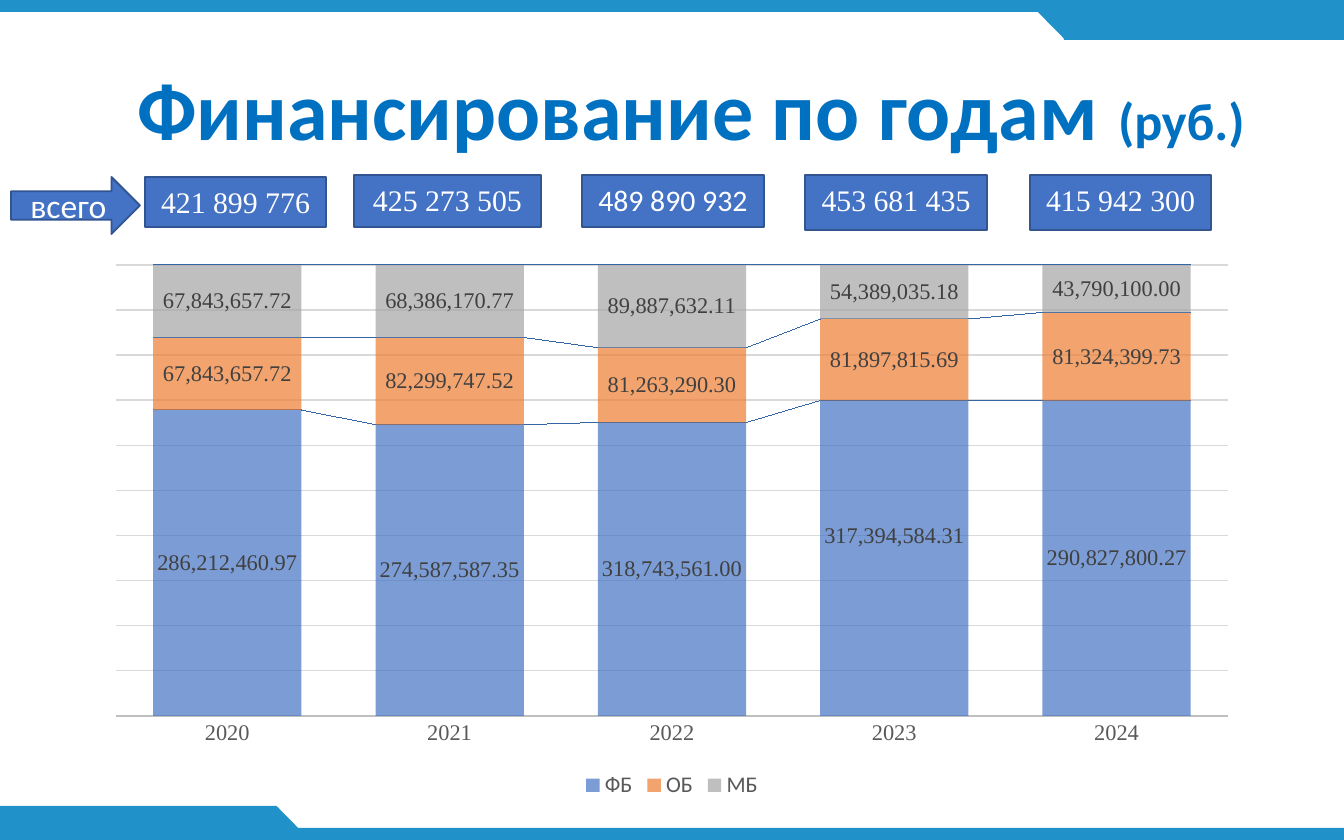
from dataclasses import dataclass

from lxml import etree
from pptx import Presentation
from pptx import util as u
from pptx.chart import data as chart_data
from pptx.dml.color import RGBColor
from pptx.enum import chart as ch
from pptx.enum import shapes, text
from pptx.oxml.ns import qn

EMU_PER_PX = 914400 / 134.4


@dataclass(frozen=True)
class Theme:
    band: str = "2191C9"
    heading: str = "0070C0"
    box: str = "4472C4"
    box_line: str = "325491"
    white: str = "FFFFFF"
    label: str = "404040"
    axis_text: str = "595959"
    axis_line: str = "BFBFBF"
    grid: str = "D9D9D9"
    sans: str = "Calibri"
    serif: str = "Times New Roman"
    heading_size: int = 44
    unit_size: int = 28
    arrow_size: int = 18
    total_size: int = 16
    chart_size: int = 12


THEME = Theme()

YEARS = ["2020", "2021", "2022", "2023", "2024"]
BUDGETS = [
    ("ФБ", "4472C4", [286212460.97, 274587587.35, 318743561.00, 317394584.31, 290827800.27]),
    ("ОБ", "ED7D31", [67843657.72, 82299747.52, 81263290.30, 81897815.69, 81324399.73]),
    ("МБ", "A5A5A5", [67843657.72, 68386170.77, 89887632.11, 54389035.18, 43790100.00]),
]
# total, font, left, top, width, height
TOTALS = [
    ("421 899 776", THEME.serif, 145, 177, 181, 50),
    ("425 273 505", THEME.serif, 354, 175, 187, 52),
    ("489 890 932", THEME.sans, 582, 175, 182, 52),
    ("453 681 435", THEME.serif, 805, 175, 182, 55),
    ("415 942 300", THEME.serif, 1030, 175, 181, 55),
]


def px(n):
    return u.Emu(round(n * EMU_PER_PX))


def rgb(code):
    return RGBColor.from_string(code)


def style_font(font, size, color, name, bold=False):
    font.size = u.Pt(size)
    font.color.rgb = rgb(color)
    font.name = name
    font.bold = bold


def add_run(paragraph, words, *style):
    run = paragraph.add_run()
    run.text = words
    style_font(run.font, *style)


def add_filled(slide, kind, box, fill, line=None):
    shape = slide.shapes.add_shape(kind, *map(px, box))
    shape.shadow.inherit = False
    shape.fill.solid()
    shape.fill.fore_color.rgb = rgb(fill)
    if line:
        shape.line.color.rgb = rgb(line)
        shape.line.width = u.Pt(1)
    else:
        shape.line.fill.background()
    return shape


def add_bands(slide):
    rect, merge = shapes.MSO_SHAPE.RECTANGLE, shapes.MSO_SHAPE.FLOWCHART_MERGE
    for kind, box, turn in [
        (rect, (0, 0, 1344, 12), 0),
        (rect, (0, 828, 1344, 12), 0),
        (rect, (1064, 6, 280, 34), 0),
        (merge, (1031, 5, 67, 34), 0),
        (rect, (0, 806, 276, 34), 0),
        (merge, (243, 806, 67, 34), 180),
    ]:
        add_filled(slide, kind, box, THEME.band).rotation = turn


def add_heading(slide):
    frame = slide.shapes.add_textbox(*map(px, (112, 32, 1158, 163))).text_frame
    frame.word_wrap = True
    frame.vertical_anchor = text.MSO_ANCHOR.MIDDLE
    line = frame.paragraphs[0]
    line.alignment = text.PP_ALIGN.CENTER
    line.line_spacing = 0.9
    add_run(line, "Финансирование по годам ", THEME.heading_size, THEME.heading, THEME.sans, True)
    add_run(line, "(руб.)", THEME.unit_size, THEME.heading, THEME.sans, True)


def add_callout(slide, kind, words, box, size, font, anchor):
    shape = add_filled(slide, kind, box, THEME.box, THEME.box_line)
    frame = shape.text_frame
    frame.word_wrap = True
    frame.vertical_anchor = anchor
    line = frame.paragraphs[0]
    line.alignment = text.PP_ALIGN.CENTER
    add_run(line, words, size, THEME.white, font)


def manual_layout(**parts):
    layout = etree.Element(qn("c:layout"))
    manual = etree.SubElement(layout, qn("c:manualLayout"))
    for tag, value in parts.items():
        etree.SubElement(manual, qn(f"c:{tag}")).set("val", str(value))
    return layout


def place_plot(chart):
    area = chart.plots[0]._element.getparent()
    for old in area.findall(qn("c:layout")):
        area.remove(old)
    area.insert(0, manual_layout(layoutTarget="inner", xMode="edge", yMode="edge",
                                 x=0.02, y=0.02, w=0.96, h=0.82))


def add_series_lines(plot):
    lines = etree.Element(qn("c:serLines"))
    plot._element.find(qn("c:axId")).addprevious(lines)


def style_series(series, color):
    series.format.fill.solid()
    series.format.fill.fore_color.rgb = rgb(color)
    tint = series._element.find(".//" + qn("a:srgbClr"))
    etree.SubElement(tint, qn("a:alpha")).set("val", "70000")
    labels = series.data_labels
    labels.show_value = True
    labels.position = ch.XL_LABEL_POSITION.CENTER
    labels.number_format = "#,##0.00"
    labels.number_format_is_linked = False
    style_font(labels.font, THEME.chart_size, THEME.label, THEME.serif)


def raise_label(series, index, shift):
    """Move one value label up by a fraction of the chart height."""
    label = series.points[index].data_label
    label.position = ch.XL_LABEL_POSITION.CENTER
    style_font(label.font, THEME.chart_size, THEME.label, THEME.serif)
    idx = series._element.find(".//" + qn("c:dLbl") + "/" + qn("c:idx"))
    idx.addnext(manual_layout(x=0, y=-shift))


def add_funding_chart(slide):
    data = chart_data.CategoryChartData(number_format="#,##0.00")
    data.categories = YEARS
    for name, _, values in BUDGETS:
        data.add_series(name, values)
    chart = slide.shapes.add_chart(ch.XL_CHART_TYPE.COLUMN_STACKED_100,
                                   *map(px, (93, 254, 1158, 550)), data).chart
    style_font(chart.font, THEME.chart_size, THEME.axis_text, THEME.sans)
    chart.has_title = False
    chart.has_legend = True
    chart.legend.position = ch.XL_LEGEND_POSITION.BOTTOM
    chart.legend.include_in_layout = False
    style_font(chart.legend.font, THEME.chart_size, THEME.axis_text, THEME.sans)

    years = chart.category_axis
    years.major_tick_mark = ch.XL_TICK_MARK.NONE
    years.format.line.color.rgb = rgb(THEME.axis_line)
    years.format.line.width = u.Pt(0.75)
    style_font(years.tick_labels.font, THEME.chart_size, THEME.axis_text, THEME.serif)
    shares = chart.value_axis
    shares.visible = False
    shares.has_major_gridlines = True
    shares.major_gridlines.format.line.color.rgb = rgb(THEME.grid)
    shares.major_gridlines.format.line.width = u.Pt(0.75)

    plot = chart.plots[0]
    plot.vary_by_categories = False
    plot.gap_width = 50
    plot.overlap = 100
    for series, (_, color, _) in zip(plot.series, BUDGETS):
        style_series(series, color)
    raise_label(plot.series[0], 3, 0.04)
    add_series_lines(plot)
    place_plot(chart)


def main():
    deck = Presentation()
    deck.slide_width, deck.slide_height = px(1344), px(840)
    slide = deck.slides.add_slide(deck.slide_layouts[6])
    add_bands(slide)
    add_funding_chart(slide)
    add_heading(slide)
    for total, font, *box in TOTALS:
        add_callout(slide, shapes.MSO_SHAPE.RECTANGLE, total, box,
                    THEME.total_size, font, text.MSO_ANCHOR.TOP)
    add_callout(slide, shapes.MSO_SHAPE.RIGHT_ARROW, "всего", (11, 177, 129, 57),
                THEME.arrow_size, THEME.sans, text.MSO_ANCHOR.MIDDLE)
    deck.save("out.pptx")


if __name__ == "__main__":
    main()
